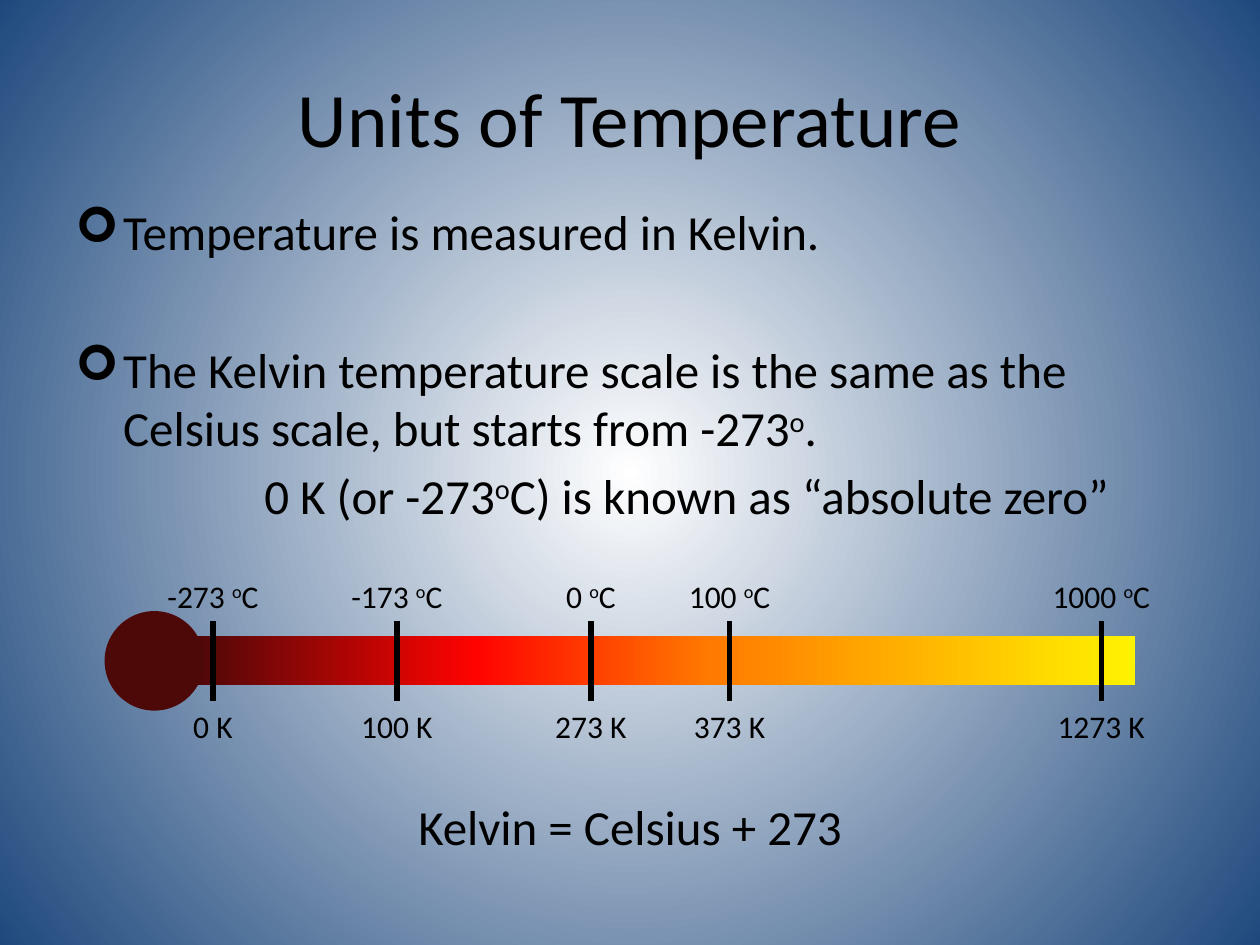
from lxml import etree
from pptx import Presentation
from pptx.dml.color import RGBColor
from pptx.enum.shapes import MSO_CONNECTOR, MSO_SHAPE
from pptx.enum.text import MSO_ANCHOR, PP_ALIGN
from pptx.oxml.ns import qn
from pptx.util import Inches, Pt

CENTER = PP_ALIGN.CENTER
MIDDLE = MSO_ANCHOR.MIDDLE
RECTANGLE, OVAL = MSO_SHAPE.RECTANGLE, MSO_SHAPE.OVAL
STRAIGHT = MSO_CONNECTOR.STRAIGHT

BLACK = RGBColor(0x00, 0x00, 0x00)
WHITE = RGBColor(0xFF, 0xFF, 0xFF)
NAVY = RGBColor(0x1F, 0x49, 0x7D)
YELLOW = RGBColor(0xFF, 0xF2, 0x00)
ORANGE = RGBColor(0xFF, 0x7A, 0x00)
RED = RGBColor(0xFF, 0x03, 0x00)
MAROON = RGBColor(0x4D, 0x08, 0x08)

FONT = "Calibri"
BODY_SIZE = 28
LABEL_SIZE = 18
DEGREE = ("o", True)

# Tick centre, label width, Celsius, Kelvin
SCALE_MARKS = [
    (1.69, 0.94, "-273", "0"),
    (3.15, 0.94, "-173", "100"),
    (4.69, 0.95, "0", "273"),
    (5.79, 0.95, "100", "373"),
    (8.74, 1.18, "1000", "1273"),
]


def set_gradient(fill, owner, stops):
    """Give the fill inside owner its stops; return its XML for the direction."""
    fill.gradient()
    gradient = next(owner.iter(qn("a:gradFill")))
    for part in list(gradient):
        gradient.remove(part)
    stop_list = etree.SubElement(gradient, qn("a:gsLst"))
    for percent, color in stops:
        stop = etree.SubElement(stop_list, qn("a:gs"), pos=str(percent * 1000))
        etree.SubElement(stop, qn("a:srgbClr"), val=str(color))
    return gradient


def paint_background(slide):
    gradient = set_gradient(slide.background.fill, slide.element,
                            [(0, WHITE), (100, NAVY)])
    circle = etree.SubElement(gradient, qn("a:path"), path="circle")
    etree.SubElement(circle, qn("a:fillToRect"),
                     l="50000", t="50000", r="50000", b="50000")


def add_runs(paragraph, pieces, size):
    """Add (text, is_superscript) pieces as runs."""
    for text, is_superscript in pieces:
        run = paragraph.add_run()
        run.text = text
        run.font.name = FONT
        run.font.size = Pt(size)
        run.font.color.rgb = BLACK
        if is_superscript:
            run.font._element.set("baseline", "30000")


def add_text_frame(slide, left, top, width, height):
    box = slide.shapes.add_textbox(Inches(left), Inches(top),
                                   Inches(width), Inches(height))
    box.text_frame.word_wrap = True
    return box.text_frame


def add_centered_text(slide, left, top, width, height, pieces, size):
    frame = add_text_frame(slide, left, top, width, height)
    frame.paragraphs[0].alignment = CENTER
    add_runs(frame.paragraphs[0], pieces, size)
    return frame


def indent(paragraph, margin, bullet=None):
    properties = paragraph._p.get_or_add_pPr()
    properties.set("marL", str(Inches(margin)))
    properties.set("indent", str(-Inches(margin) if bullet else 0))
    if bullet:
        etree.SubElement(properties, qn("a:buFont"), typeface="Wingdings")
        etree.SubElement(properties, qn("a:buChar"), char=bullet)


def add_body(slide):
    statements = [
        (0, 0.38, "➢", [("Temperature is measured in Kelvin.", False)]),
        (45, 0.38, "➢", [("The Kelvin temperature scale is the same as the "
                          "Celsius scale, but starts from -273", False),
                         DEGREE, (".", False)]),
        (5, 1.5, None, [("0 K (or -273", False), DEGREE,
                        ("C) is known as “absolute zero”", False)]),
    ]
    frame = add_text_frame(slide, 0.5, 1.55, 9, 4.95)
    for number, (gap, margin, bullet, pieces) in enumerate(statements):
        paragraph = frame.add_paragraph() if number else frame.paragraphs[0]
        paragraph.space_before = Pt(gap)
        indent(paragraph, margin, bullet)
        add_runs(paragraph, pieces, BODY_SIZE)


def add_plain_shape(group, kind, left, top, width, height):
    shape = group.shapes.add_shape(kind, Inches(left), Inches(top),
                                   Inches(width), Inches(height))
    shape.shadow.inherit = False
    shape.line.fill.background()
    return shape


def add_thermometer(slide):
    thermometer = slide.shapes.add_group_shape()
    tube = add_plain_shape(thermometer, RECTANGLE, 1.53, 5.05, 7.48, 0.39)
    gradient = set_gradient(tube.fill, tube._element.spPr,
                            [(0, YELLOW), (45, ORANGE), (70, RED), (100, MAROON)])
    etree.SubElement(gradient, qn("a:lin"), ang=str(180 * 60000), scaled="0")
    bulb = add_plain_shape(thermometer, OVAL, 0.83, 4.85, 0.79, 0.79)
    bulb.fill.solid()
    bulb.fill.fore_color.rgb = MAROON


def add_tick(slide, x):
    tick = slide.shapes.add_connector(STRAIGHT, Inches(x), Inches(4.93),
                                      Inches(x), Inches(5.56))
    tick.line.color.rgb = BLACK
    tick.line.width = Pt(3)
    etree.SubElement(tick._element.spPr, qn("a:effectLst"))


def add_scale_mark(slide, x, width, celsius, kelvin):
    left = x - width / 2
    add_centered_text(slide, left, 4.53, width, 0.4,
                      [(f"{celsius} ", False), DEGREE, ("C", False)], LABEL_SIZE)
    add_centered_text(slide, left, 5.56, width, 0.4,
                      [(f"{kelvin} K", False)], LABEL_SIZE)
    add_tick(slide, x)


def main():
    presentation = Presentation()
    presentation.slide_width = Inches(10)
    presentation.slide_height = Inches(7.5)
    slide = presentation.slides.add_slide(presentation.slide_layouts[6])

    paint_background(slide)
    title = add_centered_text(slide, 0.5, 0.3, 9, 1.25,
                              [("Units of Temperature", False)], 44)
    title.vertical_anchor = MIDDLE
    add_body(slide)
    add_thermometer(slide)
    for mark in SCALE_MARKS:
        add_scale_mark(slide, *mark)
    add_centered_text(slide, 3.15, 6.27, 3.7, 0.57,
                      [("Kelvin = Celsius + 273", False)], BODY_SIZE)
    presentation.save("out.pptx")


if __name__ == "__main__":
    main()
